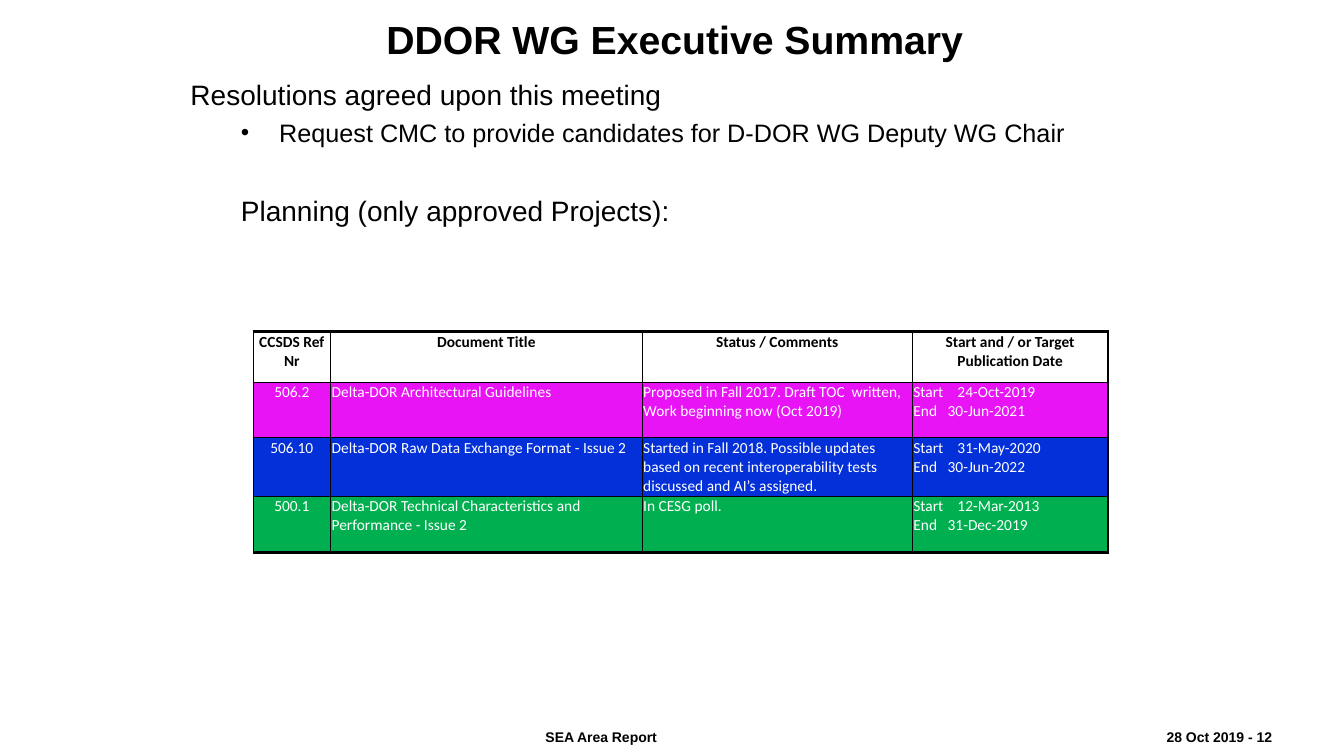
from dataclasses import dataclass

import lxml.etree
import pptx
import pptx.dml.color
import pptx.enum.text
import pptx.oxml.ns
import pptx.util

RGBColor = pptx.dml.color.RGBColor
ALIGN = pptx.enum.text.PP_ALIGN

BLACK = RGBColor(0x00, 0x00, 0x00)
WHITE = RGBColor(0xFF, 0xFF, 0xFF)
MAGENTA = RGBColor(0xE8, 0x14, 0xF5)
BLUE = RGBColor(0x03, 0x30, 0xD8)
GREEN = RGBColor(0x00, 0xB0, 0x50)

THIN, THICK = 0.5, 2
START_GAP, END_GAP = 7.5, 5


def px(length: int) -> pptx.util.Emu:
    return pptx.util.Emu(length * 9144)


@dataclass(frozen=True)
class Piece:
    text: str
    tracking: float = 0


@dataclass(frozen=True)
class Line:
    pieces: tuple[Piece, ...]
    size: int
    font: str = "Arial"
    bold: bool = False
    color: RGBColor = BLACK
    align: ALIGN = ALIGN.LEFT
    spacing: float = 1.0
    before: int = 0
    margin: int = 0
    indent: int = 0
    bullet: bool = False


@dataclass(frozen=True)
class TextArea:
    box: tuple[int, int, int, int]
    lines: tuple[Line, ...]


@dataclass(frozen=True)
class Document:
    ref: str
    title: str
    status: str
    start: str
    end: str
    color: RGBColor


def words(text: str) -> tuple[Piece, ...]:
    return (Piece(text),)


FOOTERS = (
    TextArea((1148, 719, 125, 26), (Line(words("28 Oct 2019 - 12"), 10, bold=True),)),
    TextArea((532, 719, 131, 26), (Line(words("SEA Area Report"), 10, bold=True),)),
)
BODY_AREAS = (
    TextArea((183, 64, 970, 206), (
        Line(words("Resolutions agreed upon this meeting"), 20, spacing=1.2),
        Line(words("Request CMC to provide candidates for D-DOR WG Deputy WG Chair"), 18,
             spacing=1.2, margin=88, indent=-38, bullet=True),
        Line(words("Planning (only approved Projects):"), 20,
             spacing=1.2, before=28, margin=50),
    )),
    TextArea((263, 14, 773, 58),
             (Line(words("DDOR WG Executive Summary "), 28, bold=True,
                   align=ALIGN.CENTER, spacing=0.9, margin=50),)),
)

HEADINGS = ("CCSDS Ref Nr", "Document Title", "Status / Comments",
            "Start and / or Target Publication Date")
DOCUMENTS = (
    Document("506.2", "Delta-DOR Architectural Guidelines",
             "Proposed in Fall 2017. Draft TOC  written, Work beginning now (Oct 2019)",
             "24-Oct-2019", "30-Jun-2021", MAGENTA),
    Document("506.10", "Delta-DOR Raw Data Exchange Format - Issue 2",
             "Started in Fall 2018. Possible updates based on recent interoperability "
             "tests discussed and AI’s assigned.",
             "31-May-2020", "30-Jun-2022", BLUE),
    Document("500.1", "Delta-DOR Technical Characteristics and Performance - Issue 2",
             "In CESG poll.", "12-Mar-2013", "31-Dec-2019", GREEN),
)
COLUMN_WIDTHS = (77, 309, 268, 194)
ROW_HEIGHTS = (50, 55, 58, 56)


def add_element(parent, tag: str, **attributes: str):
    element = lxml.etree.SubElement(parent, pptx.oxml.ns.qn(tag))
    for key, value in attributes.items():
        element.set(key, value)
    return element


def write_lines(frame, lines: tuple[Line, ...]) -> None:
    for index, line in enumerate(lines):
        paragraph = frame.add_paragraph() if index else frame.paragraphs[0]
        paragraph.alignment = line.align
        paragraph.line_spacing = line.spacing
        paragraph.space_before = pptx.util.Pt(line.before)
        properties = paragraph._p.get_or_add_pPr()
        properties.set("marL", str(px(line.margin)))
        properties.set("indent", str(px(line.indent)))
        if line.bullet:
            color = add_element(properties, "a:buClr")
            add_element(color, "a:srgbClr", val=str(line.color))
            add_element(properties, "a:buSzPct", val="95000")
            add_element(properties, "a:buFont", typeface=line.font)
            add_element(properties, "a:buChar", char="•")
        for piece in line.pieces:
            if piece.text == "\n":
                paragraph.add_line_break()
                continue
            run = paragraph.add_run()
            run.text = piece.text
            run.font.name = line.font
            run.font.size = pptx.util.Pt(line.size)
            run.font.bold = line.bold
            run.font.color.rgb = line.color
            if piece.tracking:
                run.font._element.set("spc", str(int(piece.tracking * 100)))


def draw_footer(slide, area: TextArea) -> None:
    frame = slide.shapes.add_textbox(*map(px, area.box)).text_frame
    frame.word_wrap = False
    frame.margin_left = frame.margin_right = px(9)
    frame.margin_top = frame.margin_bottom = px(4)
    write_lines(frame, area.lines)


def draw_body_area(slide, area: TextArea) -> None:
    left, top, width, height = map(px, area.box)
    right, bottom = left + width, top + height
    outline = slide.shapes.build_freeform(left, top)
    outline.add_line_segments(((right, top), (right, bottom), (left, bottom)), close=True)
    panel = outline.convert_to_shape()
    panel.shadow.inherit = False
    panel.fill.background()
    panel.line.fill.background()
    frame = panel.text_frame
    frame.word_wrap = True
    frame.vertical_anchor = pptx.enum.text.MSO_ANCHOR.TOP
    frame.margin_left = frame.margin_right = px(6)
    frame.margin_top = frame.margin_bottom = px(6)
    write_lines(frame, area.lines)


def draw_borders(cell, widths: dict[str, float]) -> None:
    properties = cell._tc.get_or_add_tcPr()
    for side, width in widths.items():
        border = add_element(properties, f"a:ln{side}", w=str(pptx.util.Pt(width)))
        fill = add_element(border, "a:solidFill")
        add_element(fill, "a:srgbClr", val=str(BLACK))


def document_cells(document: Document) -> tuple[tuple[Line, ...], ...]:
    def body(pieces: tuple[Piece, ...], align: ALIGN = ALIGN.LEFT) -> tuple[Line, ...]:
        return (Line(pieces, 11, "Calibri", color=WHITE, align=align),)

    dates = (Piece("Start"), Piece(" ", START_GAP), Piece(document.start), Piece("\n"),
             Piece("End"), Piece(" ", END_GAP), Piece(document.end))
    return (body(words(document.ref), ALIGN.CENTER), body(words(document.title)),
            body(words(document.status)), body(dates))


def draw_planning(slide) -> None:
    header = tuple((Line(words(text), 11, "Calibri", True, align=ALIGN.CENTER),)
                   for text in HEADINGS)
    contents = (header, *map(document_cells, DOCUMENTS))
    fills = (None, *(document.color for document in DOCUMENTS))
    last_row, last_column = len(ROW_HEIGHTS) - 1, len(COLUMN_WIDTHS) - 1
    planning = slide.shapes.add_table(
        len(ROW_HEIGHTS), len(COLUMN_WIDTHS), px(251), px(329),
        px(sum(COLUMN_WIDTHS)), px(sum(ROW_HEIGHTS))).table
    planning.first_row = planning.horz_banding = False
    for column, width in zip(planning.columns, COLUMN_WIDTHS):
        column.width = px(width)
    for r, (cells, color) in enumerate(zip(contents, fills)):
        planning.rows[r].height = px(ROW_HEIGHTS[r])
        for c, lines in enumerate(cells):
            cell = planning.cell(r, c)
            cell.margin_left = cell.margin_right = cell.margin_top = px(1)
            cell.margin_bottom = 0
            draw_borders(cell, {
                "L": THIN,
                "R": THICK if c == last_column else THIN,
                "T": THICK if r == 0 else THIN,
                "B": THICK if r == last_row else THIN,
            })
            if color is None:
                cell.fill.background()
            else:
                cell.fill.solid()
                cell.fill.fore_color.rgb = color
            write_lines(cell.text_frame, lines)


def main() -> None:
    presentation = pptx.Presentation()
    presentation.slide_width, presentation.slide_height = px(1333), px(750)
    summary = presentation.slides.add_slide(presentation.slide_layouts[6])
    for footer in FOOTERS:
        draw_footer(summary, footer)
    for area in BODY_AREAS:
        draw_body_area(summary, area)
    draw_planning(summary)
    presentation.save("out.pptx")


if __name__ == "__main__":
    main()
